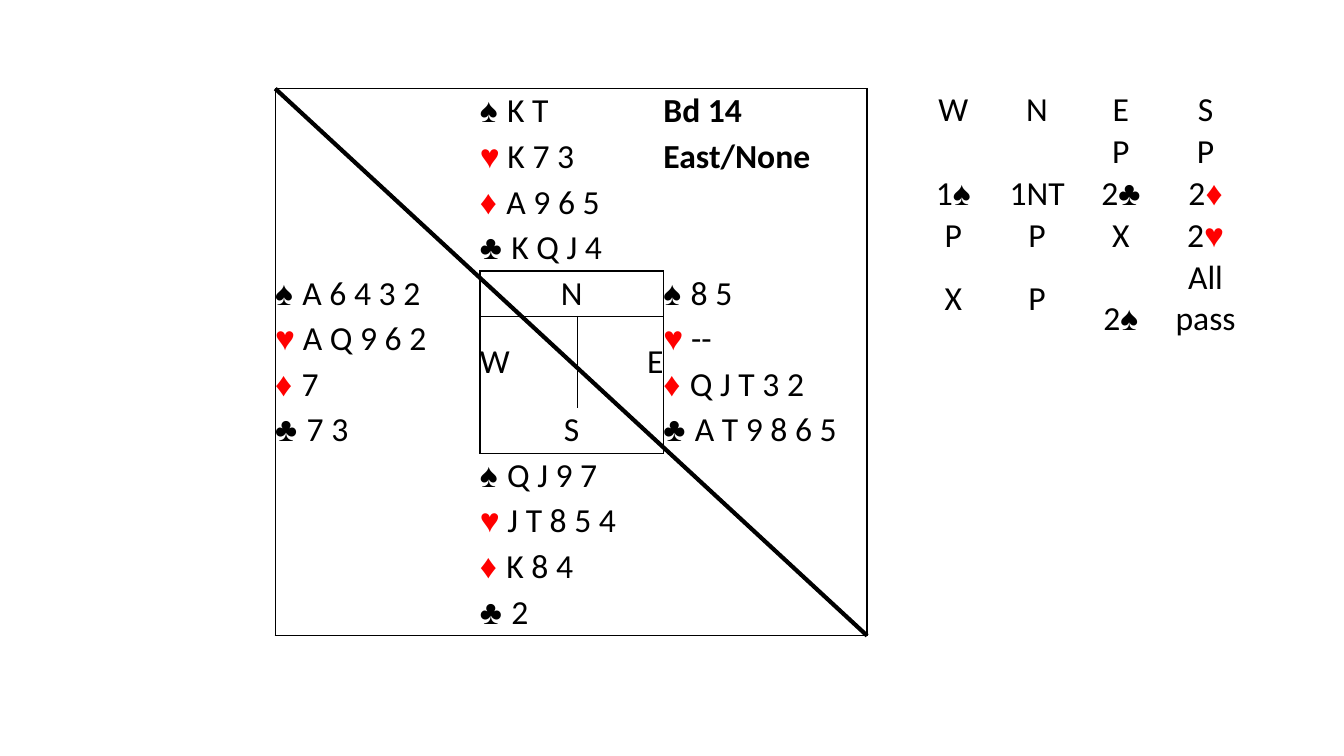
"""Build a bridge deal slide with the four hands, the compass and the auction."""
from dataclasses import dataclass

from lxml.etree import SubElement
from pptx import Presentation
from pptx.dml.color import RGBColor
from pptx.enum.shapes import MSO_CONNECTOR as Connector
from pptx.enum.text import MSO_ANCHOR as Anchor, PP_ALIGN as Align
from pptx.oxml.ns import qn
from pptx.util import Inches, Pt

COLOURS = {"ink": "000000", "red": "FF0000"}
SUITS = {"♠": "ink", "♥": "red", "♦": "red", "♣": "ink"}
PLAIN_STYLE = "{2D5ABB26-0587-4C30-8999-92F81FD0307C}"
SLIDE_WIDTH, SLIDE_HEIGHT = Inches(13.33), Inches(7.5)
TOP = 11.73
HAND_MARGINS = {side: 0 for side in ("margin_left", "margin_right", "margin_top", "margin_bottom")}
CALL_MARGINS = HAND_MARGINS | {
    side: Inches(0.01) for side in ("margin_left", "margin_right", "margin_top")
}


@dataclass(frozen=True)
class Grid:
    """Table geometry in percent of the slide's width and height."""
    left: float
    columns: tuple[float, ...]
    row: float
    rows: int
    margins: dict


@dataclass(frozen=True)
class Entry:
    """Runs of text in a table cell."""
    row: int
    column: int
    runs: tuple[str, ...]
    align: Align = Align.JUSTIFY
    anchor: Anchor = Anchor.MIDDLE
    bold: bool = False
    before: int = 0


@dataclass(frozen=True)
class Block:
    """A rectangle of table cells, with row and column counts."""
    row: int
    column: int
    rows: int
    columns: int


@dataclass(frozen=True)
class Hand:
    """One player's holdings and their first cell."""
    row: int
    column: int
    holdings: tuple[str, ...]


DEAL = Grid(20.48, (15.23, 7.28, 6.38, 15.15), 6.03, 12, HAND_MARGINS)
AUCTION = Grid(67.82, (6.23, 6.23, 6.23, 6.38), 0.53, 5, CALL_MARGINS)
AUCTION_HEIGHT = 32.67
COMPASS = Block(4, 1, 4, 2)
HANDS = (
    Hand(0, 1, ("K T", "K 7 3", "A 9 6 5", "K Q J 4")),
    Hand(4, 0, ("A 6 4 3 2", "A Q 9 6 2", "7", "7 3")),
    Hand(4, 3, ("8 5", "--", "Q J T 3 2", "A T 9 8 6 5")),
    Hand(8, 1, ("Q J 9 7", "J T 8 5 4", "K 8 4", "2")),
)
LABELS = (
    Entry(0, 3, ("Bd 14",), bold=True),
    Entry(1, 3, ("East/None",), bold=True),
    Entry(4, 1, ("N",), Align.CENTER),
    Entry(5, 1, ("W",), Align.LEFT),
    Entry(5, 2, ("E",), Align.RIGHT),
    Entry(7, 1, ("S",), Align.CENTER),
)
CALLS = (
    (("W",), ("N",), ("E",), ("S",)),
    ((), (), ("P",), ("P",)),
    (("1", "♠"), ("1NT",), ("2", "♣"), ("2", "♦")),
    (("P",), ("P",), ("X",), ("2", "♥")),
    (("X",), ("P",), ("2", "♠"), ("All pass",)),
)


def across(percent: float) -> int:
    """Return a share of the slide's width."""
    return round(SLIDE_WIDTH * percent / 100)


def down(percent: float) -> int:
    """Return a share of the slide's height."""
    return round(SLIDE_HEIGHT * percent / 100)


def add_grid(shapes, grid: Grid):
    """Add an unstyled table and return its frame."""
    frame = shapes.add_table(
        grid.rows, len(grid.columns), across(grid.left), down(TOP),
        across(sum(grid.columns)), down(grid.row * grid.rows),
    )
    table = frame.table
    table.first_row = table.horz_banding = False
    table._tbl.tblPr.find(qn("a:tableStyleId")).text = PLAIN_STYLE
    for column, width in zip(table.columns, grid.columns):
        column.width = across(width)
    for row in table.rows:
        row.height = down(grid.row)
    for cell in table.iter_cells():
        for name, value in grid.margins.items():
            setattr(cell, name, value)
    return frame


def write(table, entry: Entry) -> None:
    """Fill a cell with suit symbols and text."""
    cell = table.cell(entry.row, entry.column)
    cell.vertical_anchor = entry.anchor
    paragraph = cell.text_frame.paragraphs[0]
    for name, value in {"alignment": entry.align, "space_before": Pt(entry.before)}.items():
        setattr(paragraph, name, value)
    for text in entry.runs:
        suit = SUITS.get(text.strip())
        run = paragraph.add_run()
        run.text = text
        style = {"name": "Arial" if suit else "Calibri", "size": Pt(24), "bold": entry.bold}
        for name, value in style.items():
            setattr(run.font, name, value)
        run.font.color.rgb = RGBColor.from_string(COLOURS[suit or "ink"])


def merge(table, block: Block) -> None:
    """Merge a block of cells."""
    table.cell(block.row, block.column).merge(
        table.cell(block.row + block.rows - 1, block.column + block.columns - 1)
    )


def outline(table, block: Block) -> None:
    """Rule the outer edges of a block of cells."""
    bottom, right = block.row + block.rows, block.column + block.columns
    for row in range(block.row, bottom):
        for column in range(block.column, right):
            cell = table.cell(row, column)
            if cell.is_spanned:
                continue
            height = cell.span_height if cell.is_merge_origin else 1
            width = cell.span_width if cell.is_merge_origin else 1
            edges = {
                "a:lnL": column == block.column,
                "a:lnR": column + width == right,
                "a:lnT": row == block.row,
                "a:lnB": row + height == bottom,
            }
            for tag in (tag for tag, on_edge in edges.items() if on_edge):
                border = SubElement(cell._tc.get_or_add_tcPr(), qn(tag), w=str(Pt(1)))
                fill = SubElement(border, qn("a:solidFill"))
                SubElement(fill, qn("a:srgbClr"), val=COLOURS["ink"])


def clear_fills(table) -> None:
    """Leave every cell unfilled."""
    for cell in table.iter_cells():
        cell.fill.background()


def draw_deal(shapes) -> None:
    """Draw the hands around the compass, with the diagonal."""
    frame = add_grid(shapes, DEAL)
    deal = frame.table
    for row in (*range(5), *range(7, DEAL.rows)):
        merge(deal, Block(row, 1, 1, 2))
    for column in (1, 2):
        merge(deal, Block(5, column, 2, 1))
    for hand in HANDS:
        for step, (suit, cards) in enumerate(zip(SUITS, hand.holdings)):
            runs = (suit, f" {cards}") if suit == "♥" else (f"{suit} ", cards)
            write(deal, Entry(hand.row + step, hand.column, runs))
    for label in LABELS:
        write(deal, label)
    for block in (Block(0, 0, DEAL.rows, len(DEAL.columns)), COMPASS):
        outline(deal, block)
    clear_fills(deal)
    diagonal = shapes.add_connector(
        Connector.STRAIGHT, frame.left, frame.top,
        frame.left + frame.width, frame.top + frame.height,
    )
    diagonal.line.width = Pt(3)
    diagonal.line.color.rgb = RGBColor.from_string(COLOURS["ink"])
    SubElement(diagonal._element.spPr, qn("a:effectLst"))


def draw_auction(shapes) -> None:
    """Draw the bidding table."""
    frame = add_grid(shapes, AUCTION)
    for row, calls in enumerate(CALLS):
        for column, runs in enumerate(calls):
            anchor = Anchor.BOTTOM if row > 2 and column > 1 else Anchor.MIDDLE
            if runs:
                write(frame.table, Entry(row, column, runs, Align.CENTER, anchor,
                                         before=0 if row else 6))
    clear_fills(frame.table)
    frame.height = down(AUCTION_HEIGHT)


def main() -> None:
    """Save the slide."""
    deck = Presentation()
    deck.slide_width, deck.slide_height = SLIDE_WIDTH, SLIDE_HEIGHT
    shapes = deck.slides.add_slide(deck.slide_layouts[6]).shapes
    draw_deal(shapes)
    draw_auction(shapes)
    deck.save("out.pptx")


if __name__ == "__main__":
    main()
